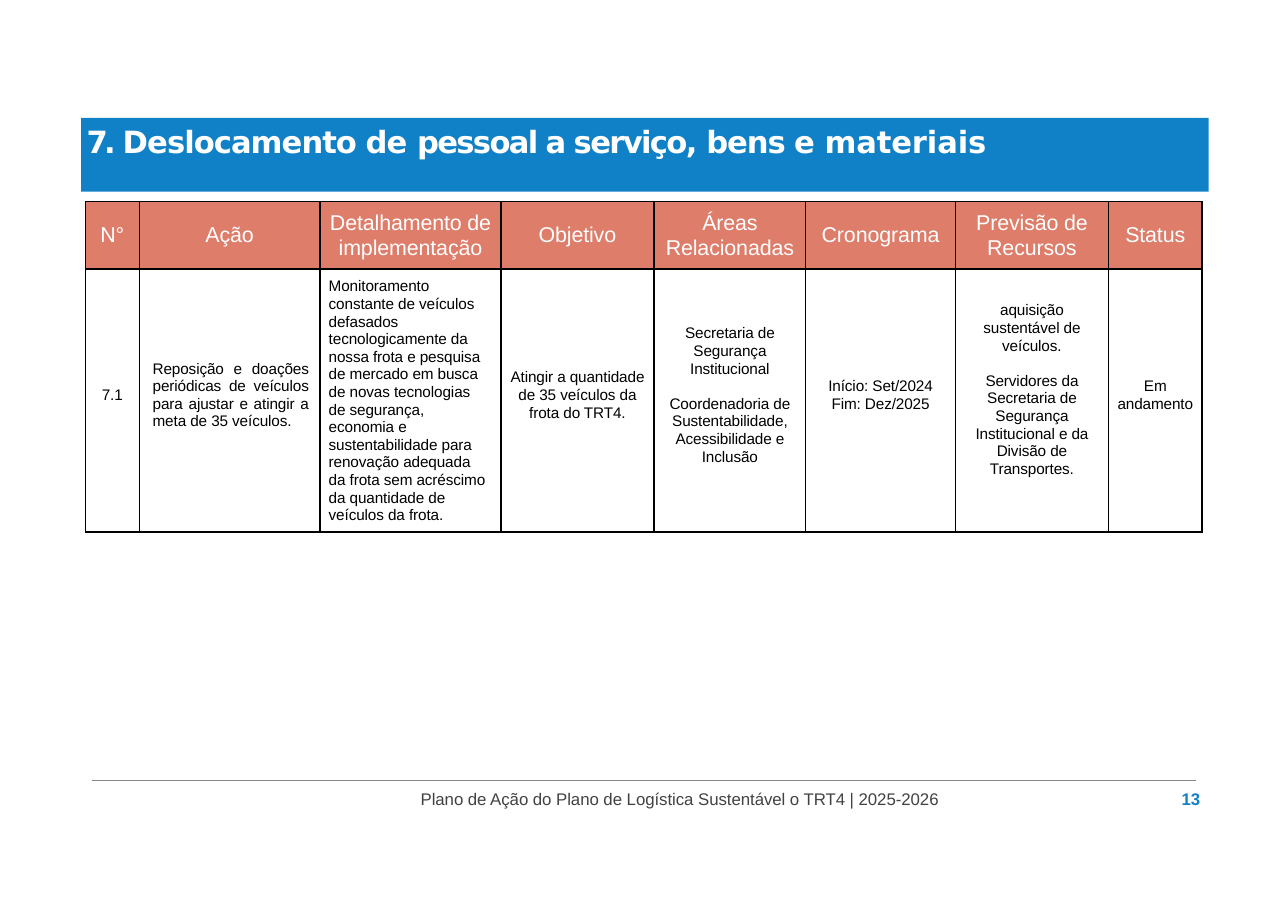
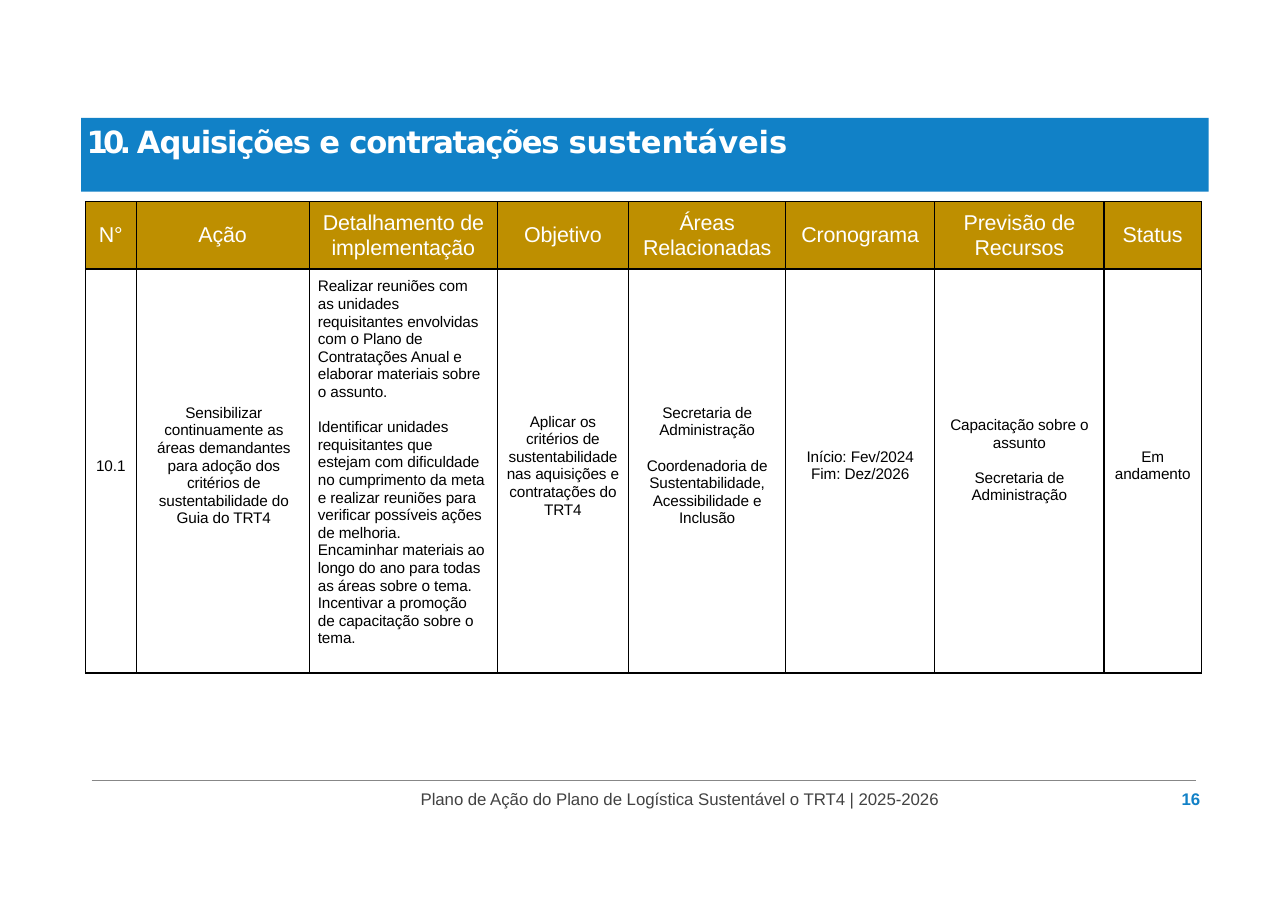
from pptx import Presentation
from pptx.dml.color import RGBColor
from pptx.enum.shapes import MSO_CONNECTOR, MSO_SHAPE
from pptx.enum.text import MSO_ANCHOR, PP_ALIGN
from pptx.oxml import parse_xml
from pptx.oxml.ns import nsdecls
from pptx.util import Cm, Pt

BLUE = RGBColor(0x11, 0x81, 0xC7)
WHITE = RGBColor(0xFF, 0xFF, 0xFF)
BLACK = RGBColor(0, 0, 0)
CORAL = RGBColor(0xDD, 0x7D, 0x6A)
GOLD = RGBColor(0xBE, 0x8F, 0x00)
RULE_GRAY = RGBColor(0x87, 0x87, 0x87)
TEXT_GRAY = RGBColor(0x42, 0x42, 0x42)

HEADERS = ["N°", "Ação", "Detalhamento de implementação", "Objetivo",
           "Áreas Relacionadas", "Cronograma", "Previsão de Recursos", "Status"]
ACTION, DETAIL, RESOURCES = 1, 2, 6
FOOTER = "Plano de Ação do Plano de Logística Sustentável o TRT4 | 2025-2026"
COORDINATION = "Coordenadoria de Sustentabilidade, Acessibilidade e Inclusão"

SLIDES = [
    {
        "title": [("7. ", -2.5), ("Deslocamento de ", -0.65),
                  ("pessoal a serviço, ", -1.1), ("bens e ", -0.75),
                  ("materiais", -0.1)],
        "page": "13",
        "color": CORAL,
        "action_align": PP_ALIGN.JUSTIFY,
        "widths": [1.24, 4.17, 4.17, 3.53, 3.5, 3.45, 3.53, 2.16],
        "body_height": 6.07,
        "row": [
            ["7.1"],
            ["Reposição e doações periódicas de veículos para ajustar e "
             "atingir a meta de 35 veículos."],
            ["Monitoramento constante de veículos defasados tecnologicamente "
             "da nossa frota e pesquisa de mercado em busca de novas "
             "tecnologias de segurança, economia e sustentabilidade para "
             "renovação adequada da frota sem acréscimo da quantidade de "
             "veículos da frota."],
            ["Atingir a quantidade de 35 veículos da frota do TRT4."],
            ["Secretaria de Segurança Institucional", COORDINATION],
            ["Início: Set/2024\vFim: Dez/2025"],
            ["aquisição sustentável de veículos.",
             "Servidores da Secretaria de Segurança Institucional e da "
             "Divisão de Transportes."],
            ["Em andamento"],
        ],
    },
    {
        "title": [("10. ", -3.2), ("Aquisições e", -0.8),
                  (" contratações ", -0.9), ("sustentáveis", -0.1)],
        "page": "16",
        "color": GOLD,
        "action_align": PP_ALIGN.CENTER,
        "widths": [1.17, 3.99, 4.34, 3.02, 3.63, 3.43, 3.91, 2.24],
        "body_height": 9.32,
        "row": [
            ["10.1"],
            ["Sensibilizar continuamente as áreas demandantes para adoção "
             "dos critérios de sustentabilidade do Guia do TRT4"],
            ["Realizar reuniões com as unidades requisitantes envolvidas com "
             "o Plano de Contratações Anual e elaborar materiais sobre o "
             "assunto.",
             "Identificar unidades requisitantes que estejam com dificuldade "
             "no cumprimento da meta e realizar reuniões para verificar "
             "possíveis ações de melhoria.\vEncaminhar materiais ao longo do "
             "ano para todas as áreas sobre o tema.\vIncentivar a promoção "
             "de capacitação sobre o tema."],
            ["Aplicar os critérios de sustentabilidade nas aquisições e "
             "contratações do TRT4"],
            ["Secretaria de Administração", COORDINATION],
            ["Início: Fev/2024\vFim: Dez/2026"],
            ["Capacitação sobre o assunto", "Secretaria de Administração"],
            ["Em andamento"],
        ],
    },
]


def set_margins(box, left=0, top=0, right=0, bottom=0):
    """Set the inner margins of a cell or text frame in centimetres."""
    box.margin_left, box.margin_top = Cm(left), Cm(top)
    box.margin_right, box.margin_bottom = Cm(right), Cm(bottom)


def style(p, size, color, name="Arial", bold=False, align=PP_ALIGN.LEFT, line=None):
    """Set the font, alignment and line spacing of a paragraph."""
    p.alignment = align
    if line:
        p.line_spacing = Pt(line)
    p.font.size, p.font.name, p.font.bold = Pt(size), name, bold
    p.font.color.rgb = color


def set_spacing(r, points):
    """Set the letter spacing of a run."""
    r._r.get_or_add_rPr().set("spc", str(round(points * 100)))


def add_title(s, parts):
    """Draw the blue title band."""
    band = s.shapes.add_shape(MSO_SHAPE.RECTANGLE, Cm(1.87), Cm(2.72), Cm(26), Cm(1.7))
    band.shadow.inherit = False
    band.fill.solid()
    band.fill.fore_color.rgb = BLUE
    band.line.fill.background()
    tf = band.text_frame
    tf.vertical_anchor = MSO_ANCHOR.TOP
    set_margins(tf, left=0.13, top=0.11)
    p = tf.paragraphs[0]
    for text, spacing in parts:
        r = p.add_run()
        r.text = text
        set_spacing(r, spacing)
    style(p, 20, WHITE, "DejaVu Sans", True)


def add_borders(cell):
    """Outline a cell with thin black lines."""
    tcPr = cell._tc.get_or_add_tcPr()
    for side in ("lnL", "lnR", "lnT", "lnB"):
        tcPr.append(parse_xml(
            f'<a:{side} {nsdecls("a")} w="12700"><a:solidFill>'
            f'<a:srgbClr val="{BLACK}"/></a:solidFill></a:{side}>'))


def fill_header(cell, text, color):
    """Write a heading cell."""
    add_borders(cell)
    cell.fill.solid()
    cell.fill.fore_color.rgb = color
    set_margins(cell)
    cell.vertical_anchor = MSO_ANCHOR.MIDDLE
    p = cell.text_frame.paragraphs[0]
    p.text = text
    style(p, 14, WHITE, align=PP_ALIGN.CENTER, line=16.1)
    set_spacing(p.runs[0], -0.1)


def fill_body(cell, column, texts, action_align):
    """Write a body cell, one paragraph for each text."""
    add_borders(cell)
    cell.fill.background()
    cell.vertical_anchor = MSO_ANCHOR.MIDDLE
    align = PP_ALIGN.CENTER
    set_margins(cell, 0.17, 0, 0.17, 0.5 if column == RESOURCES else 0.25)
    if column == ACTION:
        align = action_align
        set_margins(cell, 0.31, 0, 0.26, 0.25)
    elif column == DETAIL:
        align = PP_ALIGN.LEFT
        cell.vertical_anchor = MSO_ANCHOR.TOP
        set_margins(cell, 0.2, 0.2, 0.25)
    tf = cell.text_frame
    for i, text in enumerate(texts):
        p = tf.add_paragraph() if i else tf.paragraphs[0]
        p.text = text
        if i:
            p.space_before = Pt(11.5)
        style(p, 10, BLACK, align=align, line=11.5)
        for r in p.runs:
            set_spacing(r, -0.05)


def add_plan(s, plan):
    """Draw the table of the action plan."""
    heights = [1.55, plan["body_height"]]
    table = s.shapes.add_table(2, len(HEADERS), Cm(1.97), Cm(4.65),
                               Cm(sum(plan["widths"])), Cm(sum(heights))).table
    table.first_row = table.horz_banding = False
    for row, height in zip(table.rows, heights):
        row.height = Cm(height)
    for i, (header, width, texts) in enumerate(zip(HEADERS, plan["widths"], plan["row"])):
        table.columns[i].width = Cm(width)
        fill_header(table.cell(0, i), header, plan["color"])
        fill_body(table.cell(1, i), i, texts, plan["action_align"])


def add_footer(s, page):
    """Draw the footer rule, the document name and the page number."""
    rule = s.shapes.add_connector(MSO_CONNECTOR.STRAIGHT, Cm(2.11), Cm(18), Cm(27.58), Cm(18))
    rule.line.color.rgb = RULE_GRAY
    rule.line.width = Pt(1)
    rule._element.spPr.append(parse_xml(f'<a:effectLst {nsdecls("a")}/>'))
    for text, left, width, color, bold in ((FOOTER, 9.7, 12.8, TEXT_GRAY, False),
                                           (page, 27.25, 0.8, BLUE, True)):
        tf = s.shapes.add_textbox(Cm(left), Cm(18.19), Cm(width), Cm(0.5)).text_frame
        tf.word_wrap = True
        set_margins(tf)
        p = tf.paragraphs[0]
        p.text = text
        style(p, 11, color, bold=bold, line=13.2)
        set_spacing(p.runs[0], -0.05)


def main():
    """Build the slides and save the presentation."""
    prs = Presentation()
    prs.slide_width, prs.slide_height = Cm(29.7), Cm(21.03)
    for plan in SLIDES:
        s = prs.slides.add_slide(prs.slide_layouts[6])
        add_title(s, plan["title"])
        add_plan(s, plan)
        add_footer(s, plan["page"])
    prs.save("out.pptx")


if __name__ == "__main__":
    main()
